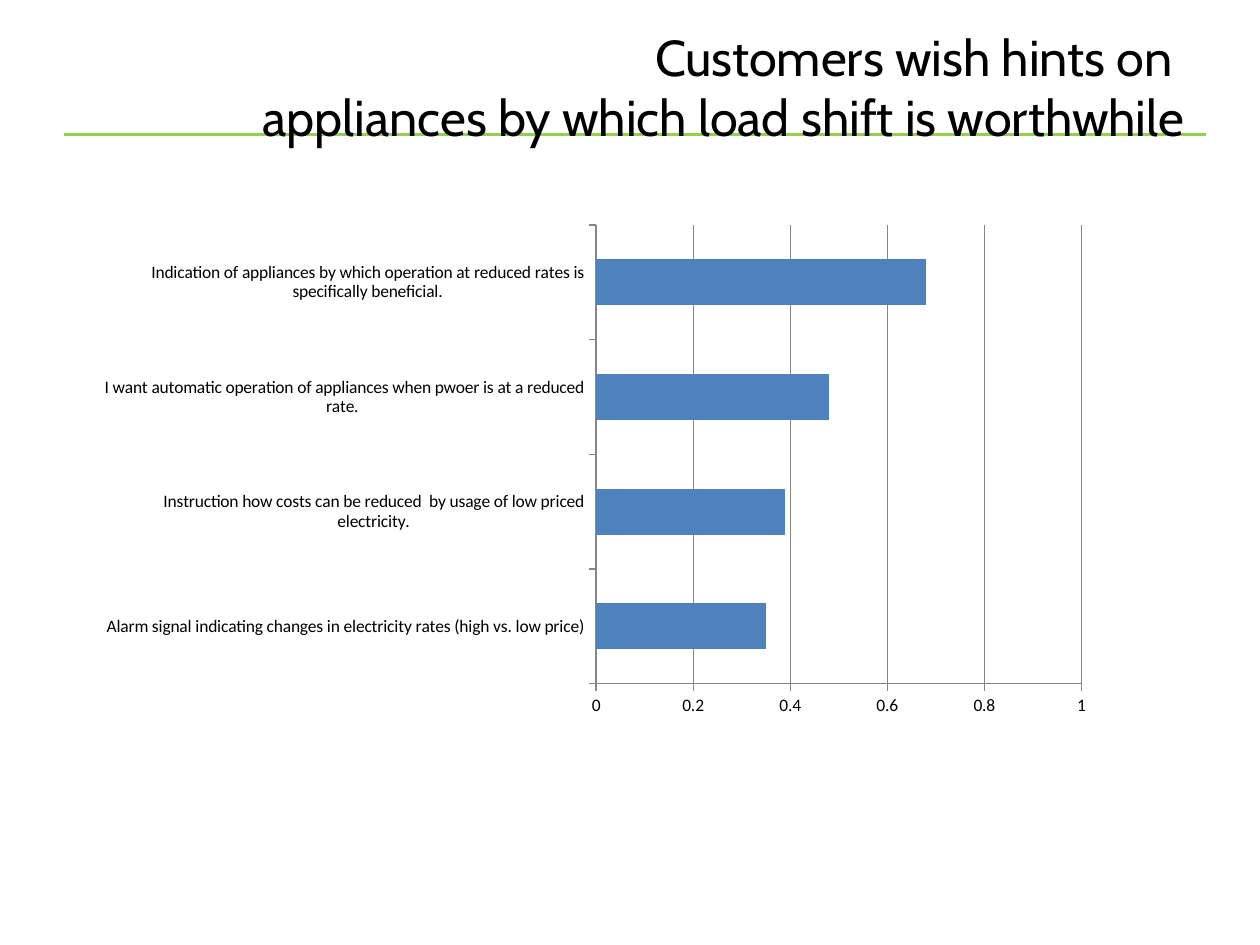
from lxml import etree
from pptx import Presentation
from pptx.chart import data as chart_data
from pptx.dml import color
from pptx.enum import chart as ch, shapes, text
from pptx.oxml import ns
from pptx.util import Inches, Pt

COLORS = {"text": "000000", "rule": "92D050", "bar": "4F81BD", "axis": "868686"}
TITLE_LINES = ["Customers wish hints on ",
               "appliances by which load shift is worthwhile"]
ANSWERS = [
    ("Alarm signal indicating changes in electricity rates (high vs. low price)", 0.35),
    ("Instruction how costs can be reduced  by usage of low priced electricity.", 0.39),
    ("I want automatic operation of appliances when pwoer is at a reduced rate. ", 0.48),
    ("Indication of appliances by which operation at reduced rates is "
     "specifically beneficial.", 0.68),
]
PLOT_LAYOUT = {"layoutTarget": "inner", "xMode": "edge", "yMode": "edge",
               "x": 0.494, "y": 0, "w": 0.491, "h": 0.858}


def rgb(name):
    return color.RGBColor.from_string(COLORS[name])


def add_rule(slide, left, top, width):
    rule = slide.shapes.add_connector(
        shapes.MSO_CONNECTOR.STRAIGHT, left, top, left + width, top)
    rule.line.color.rgb = rgb("rule")
    rule.line.width = Pt(1.5)
    etree.SubElement(rule._element.spPr, ns.qn("a:effectLst"))


def fill_title(slide, left, top, width, height):
    title = slide.shapes.title
    title.left, title.top, title.width, title.height = left, top, width, height
    frame = title.text_frame
    frame.word_wrap = True
    frame.auto_size = text.MSO_AUTO_SIZE.NONE
    frame.vertical_anchor = text.MSO_ANCHOR.MIDDLE
    paragraph = frame.paragraphs[0]
    paragraph.alignment = text.PP_ALIGN.RIGHT
    for number, line in enumerate(TITLE_LINES):
        if number:
            paragraph.add_line_break()
        run = paragraph.add_run()
        run.text = line
        run.font.name = "Cabin"
        run.font.size = Pt(28.8)
        run.font.color.rgb = rgb("text")


def set_plot_layout(chart):
    """Fix the inner plot area as fractions of the chart box."""
    plot_area = chart._chartSpace.chart.plotArea
    for old in plot_area.findall(ns.qn("c:layout")):
        plot_area.remove(old)
    layout = etree.Element(ns.qn("c:layout"))
    manual = etree.SubElement(layout, ns.qn("c:manualLayout"))
    for tag, value in PLOT_LAYOUT.items():
        etree.SubElement(manual, ns.qn(f"c:{tag}")).set("val", str(value))
    plot_area.insert(0, layout)


def add_answers_chart(slide, left, top, width, height):
    answers = chart_data.CategoryChartData()
    answers.categories = [label for label, _ in ANSWERS]
    answers.add_series("Series 1", [share for _, share in ANSWERS])
    chart = slide.shapes.add_chart(
        ch.XL_CHART_TYPE.BAR_CLUSTERED, left, top, width, height, answers).chart
    chart.has_legend = False
    chart.has_title = False
    chart.font.name = "Calibri"
    chart.font.size = Pt(10)
    chart.font.color.rgb = rgb("text")

    bars = chart.plots[0]
    bars.gap_width = 150
    bars.vary_by_categories = False
    fill = bars.series[0].format.fill
    fill.solid()
    fill.fore_color.rgb = rgb("bar")

    shares = chart.value_axis
    shares.minimum_scale, shares.maximum_scale, shares.major_unit = 0, 1, 0.2
    shares.has_major_gridlines = True
    shares.tick_labels.number_format = "General"
    shares.tick_labels.number_format_is_linked = False
    for axis in (chart.category_axis, shares):
        axis.major_tick_mark = ch.XL_TICK_MARK.OUTSIDE
        axis.minor_tick_mark = ch.XL_TICK_MARK.NONE
    for part in (chart.category_axis, shares, shares.major_gridlines):
        part.format.line.color.rgb = rgb("axis")
        part.format.line.width = Pt(0.75)
    set_plot_layout(chart)


def main():
    prs = Presentation()
    prs.slide_width, prs.slide_height = Inches(10), Inches(7.5)
    slide = prs.slides.add_slide(prs.slide_layouts[5])
    add_rule(slide, Inches(0.51), Inches(1.07), Inches(9.06))
    fill_title(slide, Inches(0.5), Inches(0.3), Inches(9), Inches(0.77))
    # The title is written over the rule
    slide.shapes.title._element.getparent().append(slide.shapes.title._element)
    add_answers_chart(slide, Inches(0.83), Inches(1.78), Inches(7.87), Inches(4.25))
    prs.save("out.pptx")


if __name__ == "__main__":
    main()
